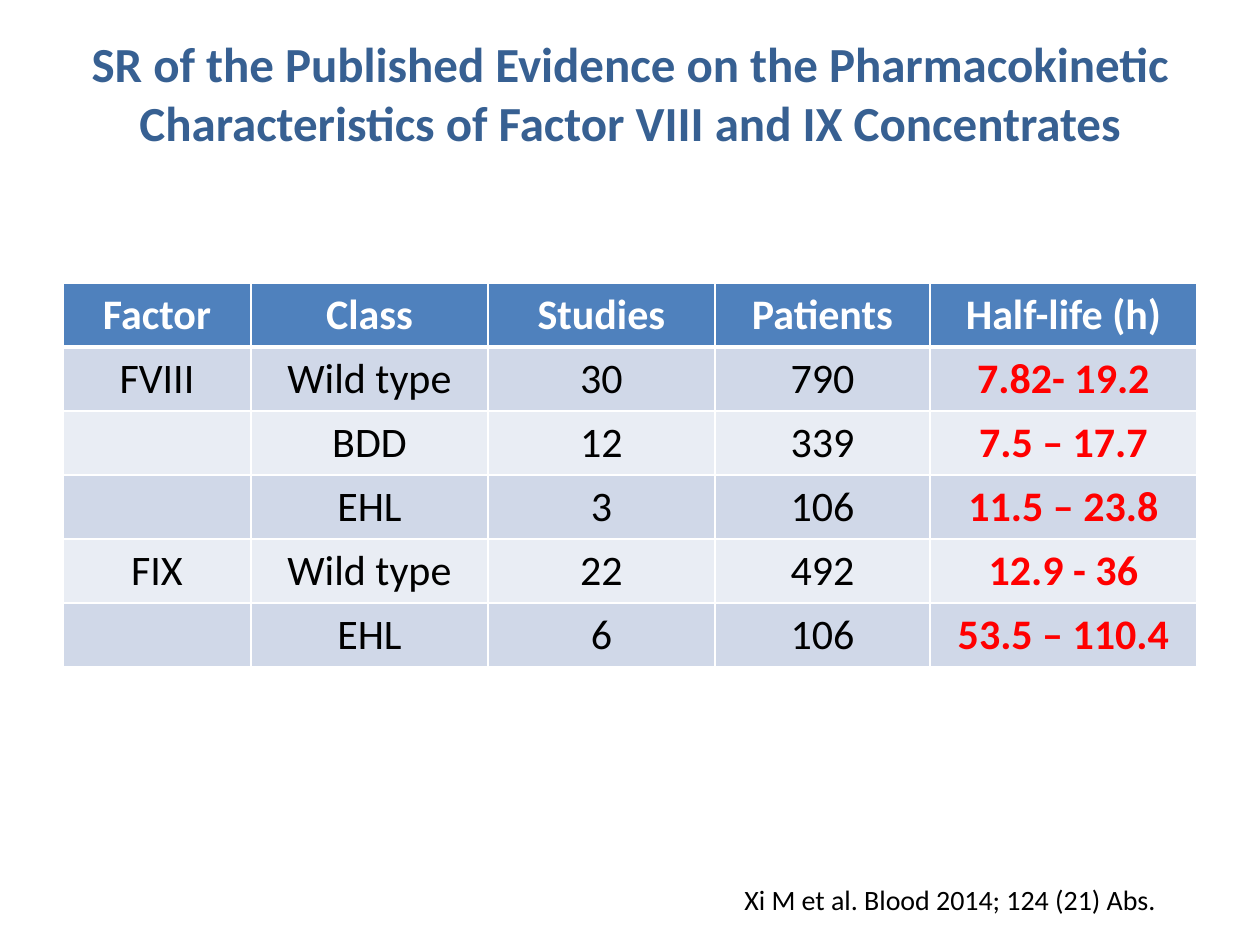
from dataclasses import dataclass

from lxml.etree import SubElement
from pptx import Presentation
from pptx.dml.color import RGBColor
from pptx.enum.text import MSO_ANCHOR as Anchor, MSO_AUTO_SIZE as AutoSize, PP_ALIGN as Align
from pptx.oxml.ns import qn
from pptx.util import Emu, Pt

PX_PER_INCH = 126


@dataclass(frozen=True)
class Theme:
    """Colours, font and type sizes of the slide."""
    font: str = "Calibri"
    title: str = "376092"
    header: str = "4F81BD"
    bands: tuple = ("D0D8E8", "E9EDF4")
    white: str = "FFFFFF"
    text: str = "000000"
    highlight: str = "FF0000"
    title_size: int = 28
    table_size: int = 24
    citation_size: int = 16


THEME = Theme()
TITLE = ("SR of the Published Evidence on the Pharmacokinetic "
         "Characteristics of Factor VIII and IX Concentrates")
CITATION = "Xi M et al. Blood 2014; 124 (21) Abs."
COLUMN_WIDTHS = (188, 237, 227, 215, 267)
ROW_HEIGHT = 64
ROWS = (
    ("Factor", "Class", "Studies", "Patients", "Half-life (h)"),
    ("FVIII", "Wild type", "30", "790", "7.82- 19.2"),
    ("", "BDD", "12", "339", "7.5 – 17.7"),
    ("", "EHL", "3", "106", "11.5 – 23.8"),
    ("FIX", "Wild type", "22", "492", "12.9 - 36"),
    ("", "EHL", "6", "106", "53.5 – 110.4"),
)


def px(length):
    """Turn pixels into EMU."""
    return Emu(round(length * 914400 / PX_PER_INCH))


def add_run(paragraph, text, size, color, bold=False):
    """Add one formatted run to a paragraph."""
    run = paragraph.add_run()
    run.text = text
    run.font.name = THEME.font
    run.font.size = Pt(size)
    run.font.bold = bold
    run.font.color.rgb = RGBColor.from_string(color)


def place_title(slide, left, top, width, height):
    """Move and fill the title placeholder."""
    title = slide.shapes.title
    title.left, title.top, title.width, title.height = map(px, (left, top, width, height))
    frame = title.text_frame
    frame.auto_size = AutoSize.NONE
    frame.vertical_anchor = Anchor.MIDDLE
    heading = frame.paragraphs[0]
    heading.alignment = Align.CENTER
    add_run(heading, TITLE, THEME.title_size, THEME.title, bold=True)
    heading.add_line_break()
    heading.font.size = Pt(THEME.title_size)


def set_borders(cell, bottom_width):
    """Draw white rules on the four sides of a cell."""
    properties = cell._tc.get_or_add_tcPr()
    for side, width in (("L", 1), ("R", 1), ("T", 1), ("B", bottom_width)):
        line = SubElement(properties, qn(f"a:ln{side}"), w=str(Pt(width)))
        fill = SubElement(line, qn("a:solidFill"))
        SubElement(fill, qn("a:srgbClr"), val=THEME.white)


def fill_cell(cell, text, row, column):
    """Style one cell by its place in the table and write its text."""
    is_header = row == 0
    is_half_life = column == len(COLUMN_WIDTHS) - 1
    set_borders(cell, 3 if is_header else 1)
    background = THEME.header if is_header else THEME.bands[(row - 1) % 2]
    cell.fill.solid()
    cell.fill.fore_color.rgb = RGBColor.from_string(background)
    if text:
        color = THEME.white if is_header else THEME.highlight if is_half_life else THEME.text
        entry = cell.text_frame.paragraphs[0]
        entry.alignment = Align.CENTER
        add_run(entry, text, THEME.table_size, color, bold=is_header or is_half_life)


def place_half_life_table(slide, left, top):
    """Build the table of studies, patients and half-lives."""
    width, height = sum(COLUMN_WIDTHS), ROW_HEIGHT * len(ROWS)
    table = slide.shapes.add_table(
        len(ROWS), len(COLUMN_WIDTHS), *map(px, (left, top, width, height))).table
    for column, column_width in zip(table.columns, COLUMN_WIDTHS):
        column.width = px(column_width)
    for row, entries in enumerate(ROWS):
        table.rows[row].height = px(ROW_HEIGHT)
        for column, text in enumerate(entries):
            fill_cell(table.cell(row, column), text, row, column)


def place_citation(slide, left, top, width, height):
    """Write the literature reference."""
    citation = slide.shapes.add_textbox(*map(px, (left, top, width, height)))
    frame = citation.text_frame
    frame.word_wrap = True
    frame.auto_size = AutoSize.SHAPE_TO_FIT_TEXT
    add_run(frame.paragraphs[0], CITATION, THEME.citation_size, THEME.text)


def main():
    """Build and save the slide."""
    presentation = Presentation()
    presentation.slide_width, presentation.slide_height = px(1260), px(945)
    slide = presentation.slides.add_slide(presentation.slide_layouts[5])
    place_citation(slide, 732, 876, 491, 47)
    place_title(slide, 63, 43, 1134, 157)
    place_half_life_table(slide, 63, 283)
    presentation.save("out.pptx")


if __name__ == "__main__":
    main()
